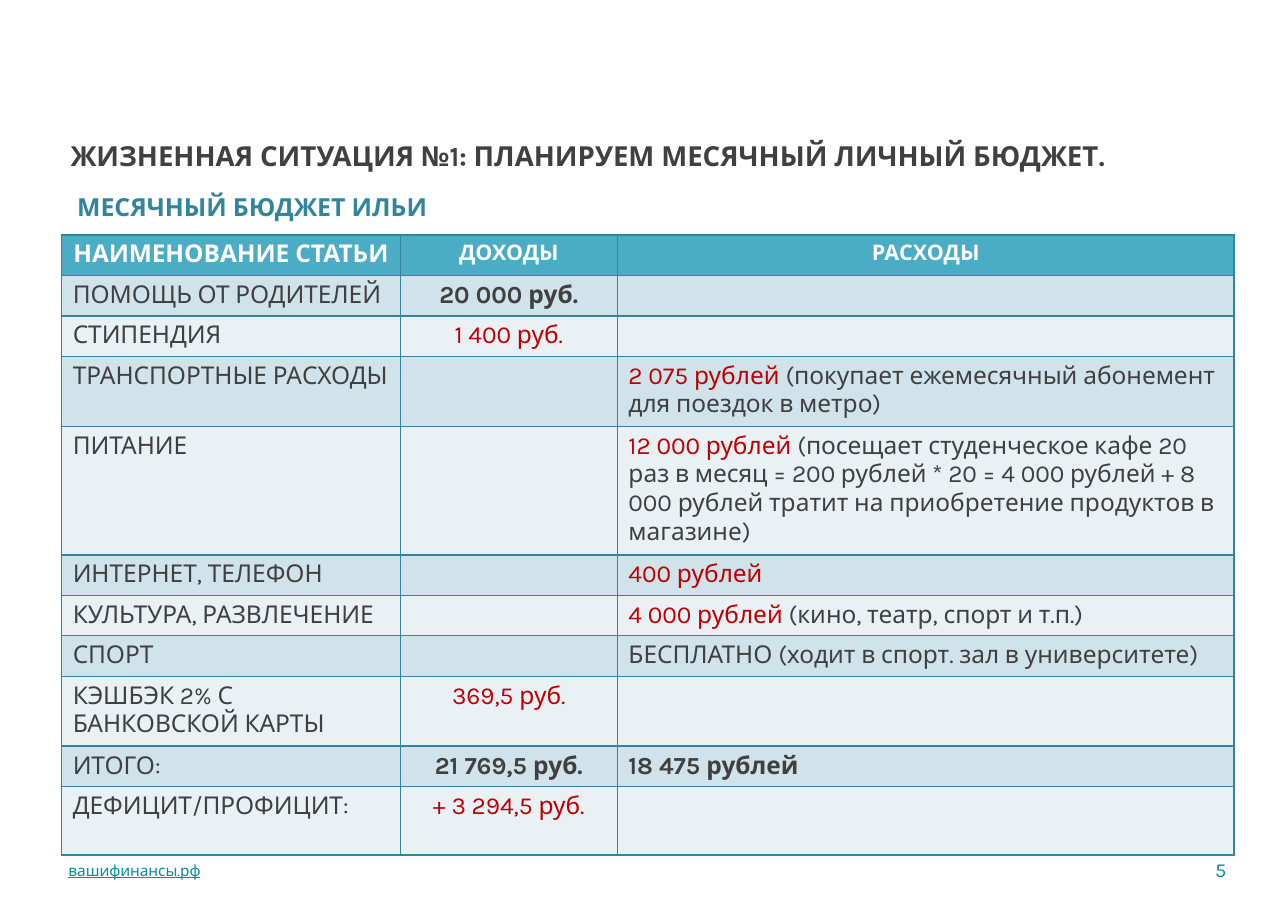
from dataclasses import dataclass

from lxml.etree import SubElement
from pptx import Presentation
from pptx.dml.color import RGBColor
from pptx.enum.text import MSO_ANCHOR, PP_ALIGN
from pptx.oxml.ns import qn
from pptx.util import Emu, Pt

# Content: each budget cell is a list of (text, style) runs
HEADING = "ЖИЗНЕННАЯ СИТУАЦИЯ №1: ПЛАНИРУЕМ МЕСЯЧНЫЙ ЛИЧНЫЙ БЮДЖЕТ."
SUBHEADING = "МЕСЯЧНЫЙ БЮДЖЕТ ИЛЬИ"
SITE = "вашифинансы.рф"
PAGE_NUMBER = "5"

BUDGET = [
    ([("НАИМЕНОВАНИЕ СТАТЬИ", "first_header")], [("ДОХОДЫ", "header")], [("РАСХОДЫ", "header")]),
    ([("ПОМОЩЬ ОТ РОДИТЕЛЕЙ", "plain")], [("20 000 руб.", "total")], []),
    ([("СТИПЕНДИЯ", "plain")], [("1 400 руб.", "amount")], []),
    ([("ТРАНСПОРТНЫЕ РАСХОДЫ", "plain")], [],
     [("2 075 рублей ", "amount"),
      ("(покупает ежемесячный абонемент для поездок в метро)", "plain")]),
    ([("ПИТАНИЕ", "plain")], [],
     [("12 000 рублей ", "amount"),
      ("(посещает студенческое кафе 20 раз в месяц = 200 рублей * 20 = 4 000 рублей "
       "+ 8 000 рублей тратит на приобретение продуктов в магазине)", "plain")]),
    ([("ИНТЕРНЕТ, ТЕЛЕФОН", "plain")], [], [("400 рублей", "amount")]),
    ([("КУЛЬТУРА, РАЗВЛЕЧЕНИЕ", "plain")], [],
     [("4 000 рублей ", "amount"), ("(кино, театр, спорт и т.п.)", "plain")]),
    ([("СПОРТ", "plain")], [], [("БЕСПЛАТНО (ходит в спорт. зал в университете)", "plain")]),
    ([("КЭШБЭК 2% С БАНКОВСКОЙ КАРТЫ", "plain")], [("369,5 руб.", "amount")], []),
    ([("ИТОГО:", "plain")], [("21 769,5 руб.", "total")], [("18 475 рублей", "total")]),
    ([("ДЕФИЦИТ/ПРОФИЦИТ:", "plain")], [("+ 3 294,5 руб.", "amount")], []),
]


@dataclass(frozen=True)
class Theme:
    font: str = "Karla"
    white: str = "FFFFFF"
    dark: str = "404040"
    red: str = "C00000"
    accent: str = "31859C"
    footer: str = "00909B"
    header_fill: str = "4BACC6"
    band_fills: tuple = ("E9F1F5", "D0E3EA")
    heading_size: float = 18
    subheading_size: float = 16.2
    body_size: float = 16
    header_size: float = 14
    page_size: float = 13
    site_size: float = 10


THEME = Theme()
STYLES = {  # size, colour, bold
    "first_header": (THEME.body_size, THEME.white, True),
    "header": (THEME.header_size, THEME.white, True),
    "plain": (THEME.body_size, THEME.dark, False),
    "amount": (THEME.body_size, THEME.red, False),
    "total": (THEME.body_size, THEME.dark, True),
}

# Layout in px, 100 px to the inch
SCALE = 9144
SLIDE_SIZE = (1168, 826)
TABLE_LEFT, TABLE_TOP = 56, 213
COLUMN_WIDTHS = [307, 197, 559]
LINE_ROW = 36
TALL_ROWS = {3: 62, 4: 111, 8: 62, 10: 62}
ROW_HEIGHTS = [TALL_ROWS.get(row, LINE_ROW) for row in range(len(BUDGET))]
INSET = 5
SUBHEADING_INDENT = 6


def px(length):
    return Emu(length * SCALE)


def style_run(run, size, color, bold=False):
    run.font.name = THEME.font
    run.font.size = Pt(size)
    run.font.bold = bold
    run.font.color.rgb = RGBColor.from_string(color)


def add_text_box(slide, left, top, width, height, text, anchor, wrap=True):
    text_frame = slide.shapes.add_textbox(px(left), px(top), px(width), px(height)).text_frame
    text_frame.margin_left = text_frame.margin_right = px(INSET)
    text_frame.margin_top = text_frame.margin_bottom = px(INSET)
    text_frame.word_wrap = wrap
    text_frame.vertical_anchor = anchor
    text_frame.text = text
    return text_frame.paragraphs


def add_borders(cell):
    properties = cell._tc.get_or_add_tcPr()
    for side in ("lnL", "lnR", "lnT", "lnB"):
        line = SubElement(properties, qn(f"a:{side}"), w=str(Pt(1)))
        fill = SubElement(line, qn("a:solidFill"))
        SubElement(fill, qn("a:srgbClr"), val=THEME.accent)


def fill_cell(cell, runs, color, centered):
    add_borders(cell)
    cell.fill.solid()
    cell.fill.fore_color.rgb = RGBColor.from_string(color)
    paragraph = cell.text_frame.paragraphs[0]
    paragraph.alignment = PP_ALIGN.CENTER if centered else PP_ALIGN.LEFT
    for text, style in runs:
        run = paragraph.add_run()
        run.text = text
        style_run(run, *STYLES[style])
    if not runs:  # keeps an empty cell as low as its row
        end = SubElement(paragraph._p, qn("a:endParaRPr"), sz=str(THEME.body_size * 100))
        SubElement(end, qn("a:latin"), typeface=THEME.font)


def add_budget_table(slide):
    frame = slide.shapes.add_table(
        len(BUDGET), len(COLUMN_WIDTHS), px(TABLE_LEFT), px(TABLE_TOP),
        px(sum(COLUMN_WIDTHS)), px(sum(ROW_HEIGHTS)))
    table = frame.table
    table.first_row = table.horz_banding = False
    for column, width in zip(table.columns, COLUMN_WIDTHS):
        column.width = px(width)
    for row, height in zip(table.rows, ROW_HEIGHTS):
        row.height = px(height)
    for row, cells in enumerate(BUDGET):
        color = THEME.band_fills[row % 2] if row else THEME.header_fill
        for column, runs in enumerate(cells):
            fill_cell(table.cell(row, column), runs, color, row == 0 or column == 1)


def main():
    presentation = Presentation()
    presentation.slide_width, presentation.slide_height = map(px, SLIDE_SIZE)
    slide = presentation.slides.add_slide(presentation.slide_layouts[6])

    # Footer site
    site = add_text_box(slide, 57, 775, 397, 28, SITE, MSO_ANCHOR.MIDDLE)[0].runs[0]
    style_run(site, THEME.site_size, THEME.footer)
    site.font.underline = True

    # Heading and subheading, on equal line pitch
    heading, subheading = add_text_box(
        slide, 59, 106, 1052, 87, f"{HEADING}\n{SUBHEADING}", MSO_ANCHOR.TOP)
    style_run(heading.runs[0], THEME.heading_size, THEME.dark, True)
    style_run(subheading.runs[0], THEME.subheading_size, THEME.accent, True)
    heading.line_spacing = 1.5
    subheading.line_spacing = 1.67
    subheading._p.get_or_add_pPr().set("marL", str(px(SUBHEADING_INDENT)))

    # Page number
    page = add_text_box(slide, 1095, 772, 22, 33, PAGE_NUMBER, MSO_ANCHOR.MIDDLE, wrap=False)[0]
    page.alignment = PP_ALIGN.RIGHT
    style_run(page.runs[0], THEME.page_size, THEME.footer)

    # Budget
    add_budget_table(slide)
    presentation.save("out.pptx")


if __name__ == "__main__":
    main()
